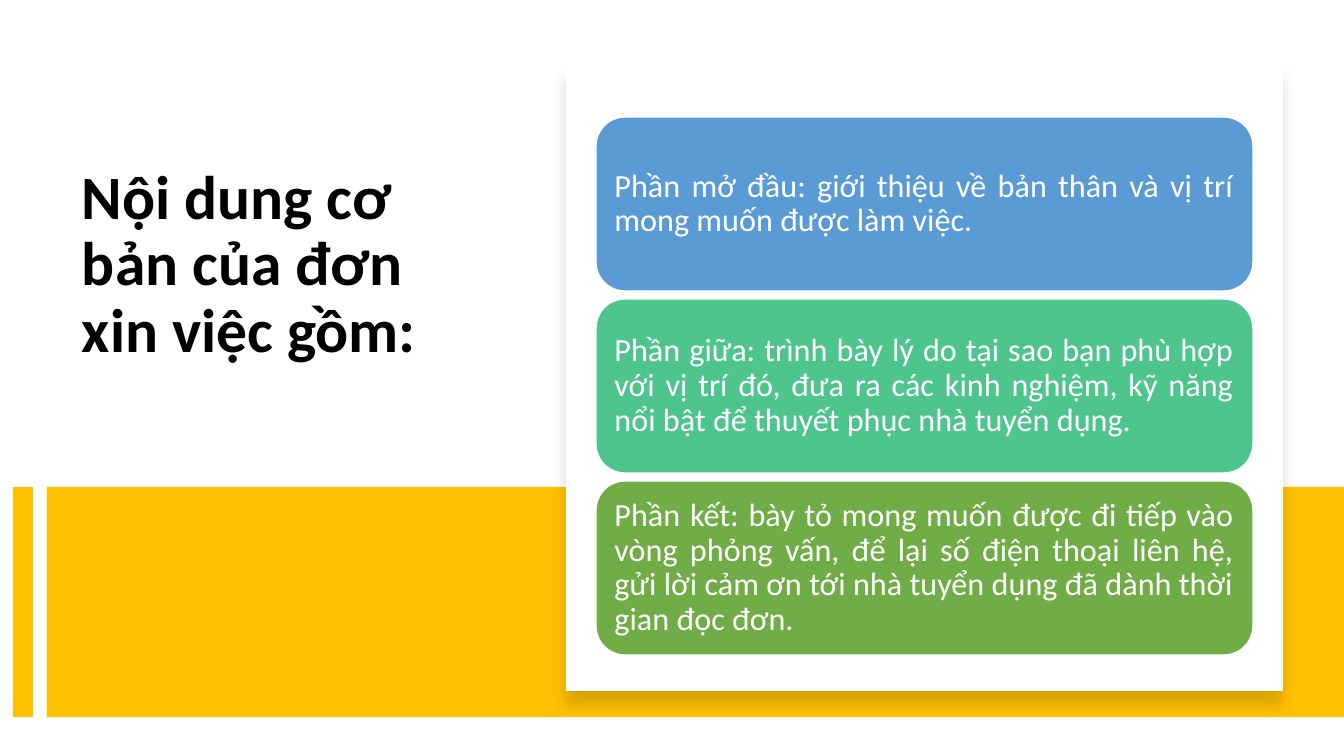
from lxml import etree
from pptx import Presentation
from pptx import util as u
from pptx.dml.color import RGBColor
from pptx.enum import shapes, text
from pptx.oxml import ns

COLOURS = {"white": "FFFFFF", "black": "000000", "amber": "FFC000",
           "blue": "5B9BD5", "teal": "4DC58D", "green": "70AD47"}
PARTS = [
    ("blue", "Phần mở đầu: giới thiệu về bản thân và vị trí mong muốn được làm việc."),
    ("teal", "Phần giữa: trình bày lý do tại sao bạn phù hợp với vị trí đó, đưa ra các "
             "kinh nghiệm, kỹ năng nổi bật để thuyết phục nhà tuyển dụng."),
    ("green", "Phần kết: bày tỏ mong muốn được đi tiếp vào vòng phỏng vấn, để lại số điện "
              "thoại liên hệ, gửi lời cảm ơn tới nhà tuyển dụng đã dành thời gian đọc đơn."),
]
CARD_TOP, CARD_PITCH = 117, 182


def px(length):
    return round(length * 12192000 / 1344)


def colour(name):
    return RGBColor.from_string(COLOURS[name])


def write(box, words, size, ink, bold=False, align=text.PP_ALIGN.LEFT,
          anchor=text.MSO_ANCHOR.TOP, margins=(10, 5)):
    frame = box.text_frame
    frame.word_wrap = True
    frame.vertical_anchor = anchor
    frame.margin_left = frame.margin_right = px(margins[0])
    frame.margin_top = frame.margin_bottom = px(margins[1])
    para = frame.paragraphs[0]
    para.alignment = align
    para.line_spacing = 0.9
    span = para.add_run()
    span.text = words
    span.font.name = "Calibri"
    span.font.size = u.Pt(size)
    span.font.bold = bold
    span.font.color.rgb = colour(ink)


class Painter:
    """Draws styled elements on the current page."""

    def __init__(self, page):
        self.page = page

    def block(self, kind, left, top, width, height, fill, outline=None):
        box = self.page.shapes.add_shape(kind, px(left), px(top), px(width), px(height))
        box.shadow.inherit = False
        box.fill.solid()
        box.fill.fore_color.rgb = colour(fill)
        if outline:
            box.line.color.rgb = colour(outline)
            box.line.width = u.Pt(1)
        else:
            box.line.fill.background()
        return box

    def panel(self, left, top, width, height):
        box = self.block(shapes.MSO_SHAPE.RECTANGLE, left, top, width, height, "white")
        effects = box._element.spPr.find(ns.qn("a:effectLst"))
        shadow = etree.SubElement(effects, ns.qn("a:outerShdw"), blurRad=str(u.Pt(11)),
                                  dist=str(u.Pt(10)), dir="5400000", algn="t", rotWithShape="0")
        tint = etree.SubElement(shadow, ns.qn("a:srgbClr"), val=COLOURS["black"])
        etree.SubElement(tint, ns.qn("a:alpha"), val="15000")

    def card(self, left, top, width, height, fill, words):
        box = self.block(shapes.MSO_SHAPE.ROUNDED_RECTANGLE, left, top, width, height,
                         fill, outline="white")
        write(box, words, 23, "white", align=text.PP_ALIGN.JUSTIFY,
              anchor=text.MSO_ANCHOR.MIDDLE, margins=(10, 10))

    def bar(self, x, top, bottom, weight):
        line = self.page.shapes.add_connector(shapes.MSO_CONNECTOR.STRAIGHT,
                                              px(x), px(top), px(x), px(bottom))
        line.line.color.rgb = colour("amber")
        line.line.width = u.Pt(weight)
        etree.SubElement(line._element.spPr, ns.qn("a:effectLst"))

    def title(self, left, top, width, height, words):
        box = self.page.shapes.add_textbox(px(left), px(top), px(width), px(height))
        write(box, words, 44, "black", bold=True)


def main():
    deck = Presentation()
    deck.slide_width, deck.slide_height = px(1344), px(756)
    painter = Painter(deck.slides.add_slide(deck.slide_layouts[6]))
    painter.title(72, 161, 418, 296, "Nội dung cơ bản của đơn xin việc gồm:")
    painter.block(shapes.MSO_SHAPE.RECTANGLE, 47, 487, 1297, 230, "amber")
    painter.bar(23, 487, 717, 14)
    painter.panel(566, 65, 717, 626)
    for row, (fill, words) in enumerate(PARTS):
        painter.card(596, CARD_TOP + row * CARD_PITCH, 657, 174, fill, words)
    deck.save("out.pptx")


if __name__ == "__main__":
    main()
